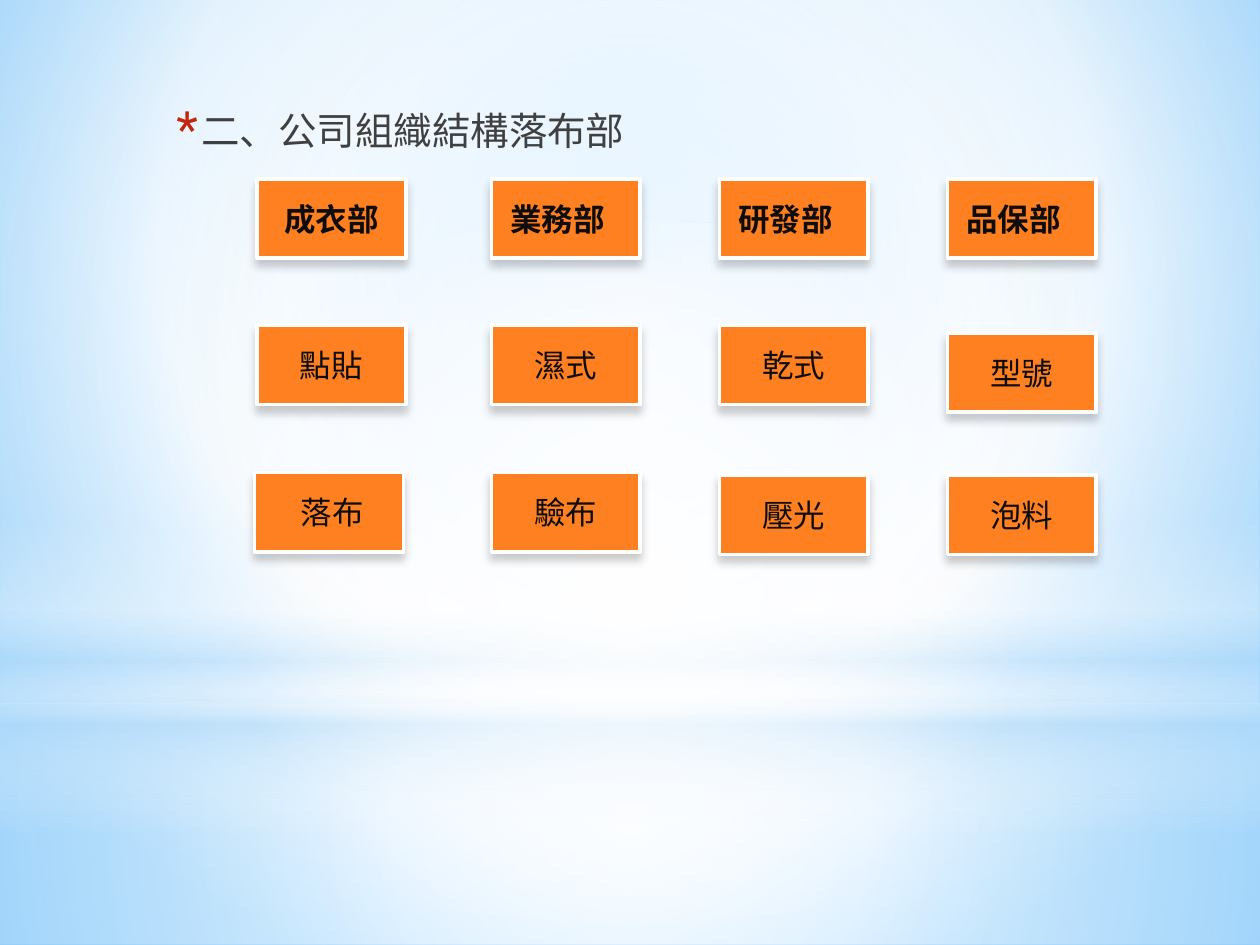
from typing import Any, NamedTuple, Optional

from lxml.etree import SubElement
from pptx import Presentation
from pptx.dml.color import RGBColor
from pptx.enum.shapes import MSO_SHAPE as Preset
from pptx.enum.text import MSO_ANCHOR as Anchor, MSO_AUTO_SIZE as AutoSize, PP_ALIGN as Align
from pptx.oxml.ns import qn
from pptx.util import Pt

WIDTH, HEIGHT = 720, 540
FONT = "Roboto"
BOX_WIDTH, BOX_HEIGHT = 85, 45.4


class Stop(NamedTuple):
    position: int
    color: str
    opacity: int = 100


class Gradient(NamedTuple):
    """A circular gradient around focus (left, top, right, bottom), or a linear one."""
    stops: list[Stop]
    focus: tuple[int, ...] = (50, 50, 50, 50)
    angle: Optional[int] = None


class Layer(NamedTuple):
    preset: Any
    top: float
    height: float
    gradient: Gradient


class Unit(NamedTuple):
    label: str
    left: float
    top: float
    bold: bool = False
    align: Any = Align.CENTER
    indent: float = 0


BACKDROP = Gradient([Stop(0, "9ED5FF"), Stop(60, "FFFFFF"), Stop(100, "5BB9FF")],
                    focus=(20, 10, 20, 60))
LAYERS = [
    Layer(Preset.RECTANGLE, 401.8, 138.2, Gradient(
        [Stop(0, "FFFFFF", 91), Stop(37, "FFFFFF", 76), Stop(100, "B4DCFA", 79)])),
    Layer(Preset.RECTANGLE, 0, 401.8, Gradient(
        [Stop(0, "FFFFFF", 89), Stop(48, "FFFFFF", 62), Stop(100, "B4DCFA", 79)])),
    Layer(Preset.RECTANGLE, 296.6, 180, Gradient(
        [Stop(0, "FFFFFF", 0), Stop(29, "FFFFFF", 30), Stop(45, "B4DCFA", 40),
         Stop(55, "FFFFFF", 26), Stop(65, "B4DCFA", 60), Stop(100, "FFFFFF", 0)], angle=90)),
    Layer(Preset.OVAL, 126, 401.8, Gradient([Stop(0, "FFFFFF"), Stop(56, "FFFFFF", 0)])),
]

COLUMNS = (146.9, 280.8, 411.1, 541.4)
HEADS_TOP, MIDDLE_TOP, LOWER_TOP = 102.2, 185.8, 270
LEFT_HEAD = {"bold": True, "align": Align.LEFT, "indent": 3.6}
UNITS = [
    Unit("成衣部", COLUMNS[0], HEADS_TOP, bold=True),
    *(Unit(label, left, HEADS_TOP, **LEFT_HEAD)
      for label, left in zip(("業務部", "研發部", "品保部"), COLUMNS[1:])),
    *(Unit(label, left, MIDDLE_TOP)
      for label, left in zip(("點貼", "濕式", "乾式"), COLUMNS)),
    Unit("型號", COLUMNS[3], MIDDLE_TOP + 4.4),
    Unit("落布", COLUMNS[0] - 1.4, LOWER_TOP, indent=3.6),
    Unit("驗布", COLUMNS[1], LOWER_TOP),
    Unit("壓光", COLUMNS[2], LOWER_TOP + 1.4),
    Unit("泡料", COLUMNS[3], LOWER_TOP + 1.4),
]


def rgb(color: str) -> RGBColor:
    return RGBColor.from_string(color)


def add_tag(parent: Any, tag: str, **attributes: Any) -> Any:
    return SubElement(parent, qn(tag), {key: str(value) for key, value in attributes.items()})


def add_color(parent: Any, color: str, opacity: int) -> None:
    add_tag(add_tag(parent, "a:srgbClr", val=color), "a:alpha", val=opacity * 1000)


def apply_gradient(host: Any, gradient: Gradient) -> None:
    """Replace the fill of a slide background or a shape."""
    host.fill_owner.fill.background()
    empty_fill = host.element.find(".//" + qn("a:noFill"))
    fill = add_tag(empty_fill.getparent(), "a:gradFill", rotWithShape=1)
    stop_list = add_tag(fill, "a:gsLst")
    for stop in gradient.stops:
        add_color(add_tag(stop_list, "a:gs", pos=stop.position * 1000), stop.color, stop.opacity)
    if gradient.angle is None:
        sides = {side: inset * 1000 for side, inset in zip("ltrb", gradient.focus)}
        add_tag(add_tag(fill, "a:path", path="circle"), "a:fillToRect", **sides)
    else:
        add_tag(fill, "a:lin", ang=gradient.angle * 60000, scaled=0)
    empty_fill.getparent().replace(empty_fill, fill)


class Painted(NamedTuple):
    fill_owner: Any
    element: Any


def format_font(font: Any, size: float, color: str, bold: bool = False) -> None:
    for key, value in {"name": FONT, "size": Pt(size), "bold": bold}.items():
        setattr(font, key, value)
    font.color.rgb = rgb(color)


def draw_layer(slide: Any, layer: Layer) -> None:
    band = slide.shapes.add_shape(layer.preset, 0, Pt(layer.top), Pt(WIDTH), Pt(layer.height))
    band.shadow.inherit = False
    band.line.fill.background()
    apply_gradient(Painted(band, band.element), layer.gradient)


def draw_unit(slide: Any, unit: Unit) -> None:
    box = slide.shapes.add_shape(Preset.RECTANGLE, Pt(unit.left), Pt(unit.top),
                                 Pt(BOX_WIDTH), Pt(BOX_HEIGHT))
    box.fill.solid()
    box.fill.fore_color.rgb = rgb("FF8021")
    box.line.color.rgb = rgb("FFFFFF")
    box.line.width = Pt(2)
    box.shadow.inherit = False
    shadow = add_tag(box.element.find(".//" + qn("a:effectLst")), "a:outerShdw",
                     blurRad=Pt(5), dist=Pt(4), dir=90 * 60000, rotWithShape=0)
    add_color(shadow, "000000", 20)
    box.text_frame.vertical_anchor = Anchor.MIDDLE
    label = box.text_frame.paragraphs[0]
    label.alignment = unit.align
    if unit.indent:
        label._p.get_or_add_pPr().set("marL", str(Pt(unit.indent)))
    run = label.add_run()
    run.text = unit.label
    format_font(run.font, 18, "0D0D0D", unit.bold)


def fill_heading(body: Any, text: str) -> None:
    place = {"left": 90, "top": 57.6, "width": 553.7, "height": 416.2}
    for key, value in place.items():
        setattr(body, key, Pt(value))
    body.text_frame.auto_size = AutoSize.NONE
    heading = body.text_frame.paragraphs[0]
    heading.space_before, heading.space_after = Pt(4.4), Pt(3)
    run = heading.add_run()
    run.text = text
    format_font(run.font, 22, "404040")
    properties = heading._p.get_or_add_pPr()
    properties.set("marL", str(Pt(18)))
    properties.set("indent", str(Pt(-14.4)))
    add_tag(add_tag(properties, "a:buClr"), "a:srgbClr", val="C3260C")
    add_tag(properties, "a:buSzPct", val=130000)
    add_tag(properties, "a:buFont", typeface=FONT)
    add_tag(properties, "a:buChar", char="*")


def main() -> None:
    deck = Presentation()
    deck.slide_width, deck.slide_height = Pt(WIDTH), Pt(HEIGHT)
    slide = deck.slides.add_slide(deck.slide_layouts[1])
    title, body = slide.placeholders
    title.element.getparent().remove(title.element)
    apply_gradient(Painted(slide.background, slide.element), BACKDROP)
    for layer in LAYERS:
        draw_layer(slide, layer)
    body.element.getparent().append(body.element)  # in front of the layers
    fill_heading(body, "二、公司組織結構落布部")
    for unit in UNITS:
        draw_unit(slide, unit)
    deck.save("out.pptx")


if __name__ == "__main__":
    main()
